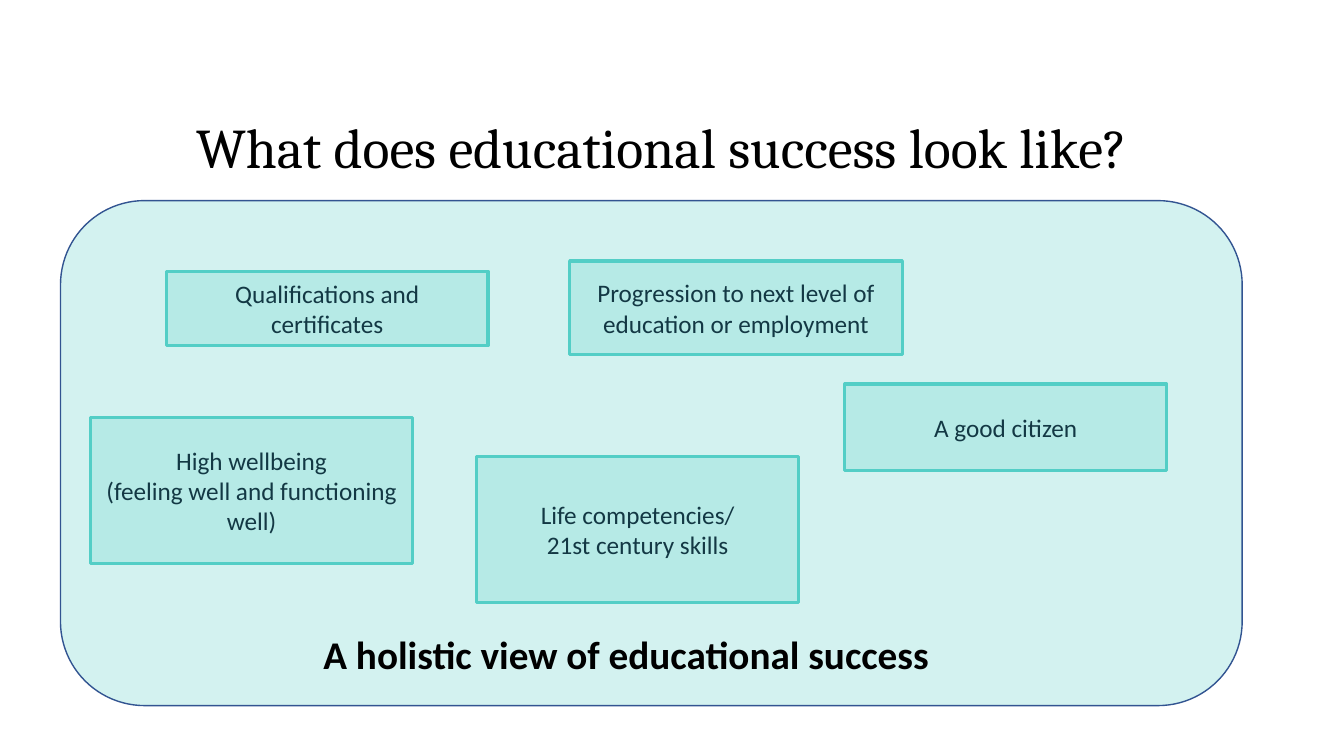
from pptx import Presentation
from pptx.dml.color import RGBColor
from pptx.enum.shapes import MSO_SHAPE
from pptx.enum.text import MSO_ANCHOR, PP_ALIGN
from pptx.oxml.ns import qn
from pptx.util import Inches, Pt
from lxml.etree import SubElement

COLORS = {"teal": "53CEC6", "navy": "325491", "ink": "133844", "black": "000000"}


class Board:
    def __init__(self, deck):
        self.slide = deck.slides.add_slide(deck.slide_layouts[6])

    def color(self, name):
        return RGBColor.from_string(COLORS[name])

    def letter(self, shape, lines, size, color, font="Calibri", bold=False,
               align=PP_ALIGN.CENTER, anchor=MSO_ANCHOR.MIDDLE, spacing=None):
        frame = shape.text_frame
        frame.word_wrap = True
        frame.vertical_anchor = anchor
        for index, line in enumerate(lines):
            para = frame.add_paragraph() if index else frame.paragraphs[0]
            para.alignment = align
            if spacing:
                para.line_spacing = spacing
            run = para.add_run()
            run.text = line
            run.font.name = font
            run.font.size = Pt(size)
            run.font.bold = bold
            run.font.color.rgb = self.color(color)

    def panel(self, kind, area, opacity, edge, width):
        shape = self.slide.shapes.add_shape(kind, *map(Inches, area))
        shape.shadow.inherit = False
        shape.fill.solid()
        shape.fill.fore_color.rgb = self.color("teal")
        tint = shape.element.spPr.find(qn("a:solidFill"))[0]
        SubElement(tint, qn("a:alpha")).set("val", str(opacity * 1000))
        shape.line.color.rgb = self.color(edge)
        shape.line.width = Pt(width)
        return shape

    def card(self, area, *lines):
        shape = self.panel(MSO_SHAPE.RECTANGLE, area, 22, "teal", 2.25)
        self.letter(shape, lines, 18, "ink")

    def label(self, area, text, size, **style):
        box = self.slide.shapes.add_textbox(*map(Inches, area))
        self.letter(box, [text], size, "black", **style)


def main():
    deck = Presentation()
    deck.slide_width, deck.slide_height = Inches(13.33), Inches(7.5)
    board = Board(deck)
    board.panel(MSO_SHAPE.ROUNDED_RECTANGLE, (0.6, 1.99, 11.72, 5.01), 25, "navy", 1)
    board.card((5.65, 2.59, 3.3, 0.93),
               "Progression to next level of education or employment")
    board.card((0.9, 4.14, 3.19, 1.45),
               "High wellbeing", "(feeling well and functioning well)")
    board.card((4.73, 4.53, 3.19, 1.45), "Life competencies/", "21st century skills")
    board.card((8.38, 3.81, 3.19, 0.86), "A good citizen")
    board.label((3.11, 6.2, 7.56, 0.57), "A holistic view of educational success", 28,
                bold=True, align=PP_ALIGN.LEFT, anchor=MSO_ANCHOR.TOP)
    board.card((1.65, 2.69, 3.19, 0.74), "Qualifications and certificates")
    board.label((0.2, 1.1, 12.72, 0.79), "What does educational success look like?", 40,
                font="Cambria", spacing=0.9)
    deck.save("out.pptx")


if __name__ == "__main__":
    main()
